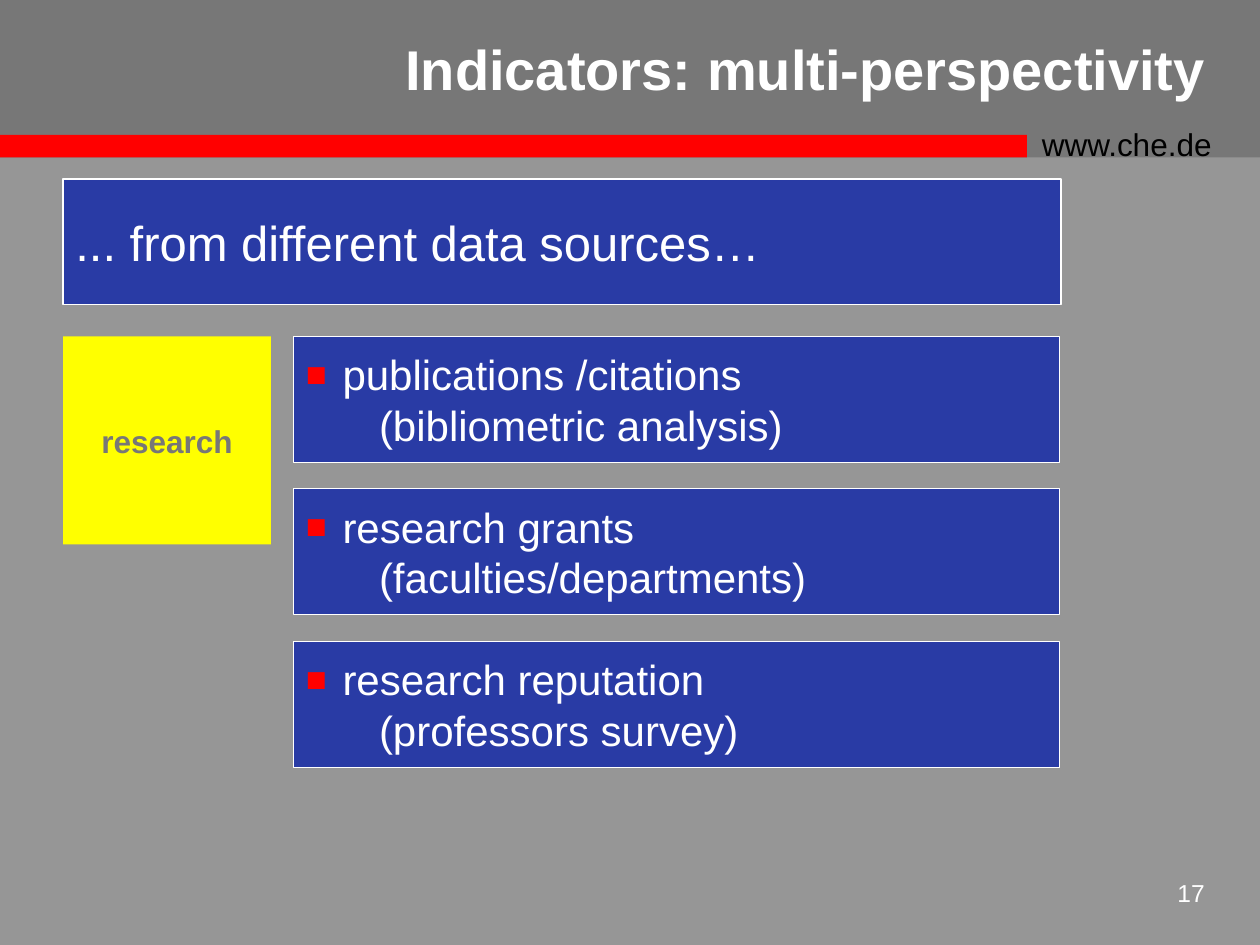
from pptx import Presentation
from pptx.dml.color import RGBColor
from pptx.enum.shapes import MSO_SHAPE
from pptx.enum.text import MSO_ANCHOR, PP_ALIGN
from pptx.oxml import parse_xml
from pptx.oxml.ns import nsdecls
from pptx.util import Inches, Pt

WHITE, GREY, RED, BLUE = "FFFFFF", "777777", "FF0000", "293BA5"
SOURCES = [
    ("publications /citations", "(bibliometric analysis)"),
    ("research grants", "(faculties/departments)"),
    ("research reputation", "(professors survey)"),
]


def paint(fill, color):
    fill.solid()
    fill.fore_color.rgb = RGBColor.from_string(color)


def write(shape, text, size, color, align=PP_ALIGN.LEFT, bold=False,
          anchor=MSO_ANCHOR.MIDDLE):
    frame = shape.text_frame
    frame.word_wrap = True
    frame.vertical_anchor = anchor
    frame.text = text
    for para in frame.paragraphs:
        para.alignment = align
        for run in para.runs:
            run.font.name = "Arial"
            run.font.size = Pt(size)
            run.font.bold = bold
            run.font.color.rgb = RGBColor.from_string(color)
    return frame


def box(slide, area, fill, line=None):
    shape = slide.shapes.add_shape(MSO_SHAPE.RECTANGLE, *map(Inches, area))
    shape.shadow.inherit = False
    paint(shape.fill, fill)
    if line:
        paint(shape.line.fill, line)
        shape.line.width = Pt(0.75)
    else:
        shape.line.fill.background()
    return shape


def label(slide, area, *args, **style):
    write(slide.shapes.add_textbox(*map(Inches, area)), *args, **style)


def indent(para, left, first=0):
    props = para._p.get_or_add_pPr()
    props.set("marL", str(Inches(left)))
    props.set("indent", str(Inches(first)))
    return props


def bullet(para, color):
    props = indent(para, 0.29, -0.29)
    for xml in (
        f'<a:buClr {nsdecls("a")}><a:srgbClr val="{color}"/></a:buClr>',
        f'<a:buSzPct {nsdecls("a")} val="83000"/>',
        f'<a:buFont {nsdecls("a")} typeface="Arial"/>',
        f'<a:buChar {nsdecls("a")} char="■"/>',
    ):
        props.append(parse_xml(xml))


def source(slide, top, name, origin):
    shape = box(slide, (2.33, top, 6.08, 1), BLUE, WHITE)
    frame = write(shape, f"{name}\n{origin}", 24, WHITE)
    head, tail = frame.paragraphs
    bullet(head, RED)
    indent(tail, 0.58)


def main():
    deck = Presentation()
    deck.slide_width, deck.slide_height = Inches(10), Inches(7.5)
    slide = deck.slides.add_slide(deck.slide_layouts[6])
    paint(slide.background.fill, "969696")

    box(slide, (0, 0, 10, 1.25), GREY)
    box(slide, (0, 1.07, 8.15, 0.18), RED)
    label(slide, (8.17, 0.94, 1.75, 0.4), "www.che.de", 18, "000000",
          anchor=MSO_ANCHOR.TOP)
    label(slide, (9.08, 6.92, 0.58, 0.42), "17", 14, WHITE,
          PP_ALIGN.RIGHT, anchor=MSO_ANCHOR.TOP)
    label(slide, (2.32, 0, 8.15, 1.08), "Indicators: multi-perspectivity",
          32, WHITE, PP_ALIGN.CENTER, bold=True)

    intro = box(slide, (0.5, 1.42, 7.92, 1), BLUE, WHITE)
    write(intro, "... from different data sources…", 28, WHITE)
    topic = box(slide, (0.5, 2.67, 1.65, 1.65), "FFFF00")
    write(topic, "research", 18, GREY, PP_ALIGN.CENTER, bold=True)
    for row, texts in enumerate(SOURCES):
        source(slide, 2.67 + row * 1.21, *texts)

    deck.save("out.pptx")


if __name__ == "__main__":
    main()
